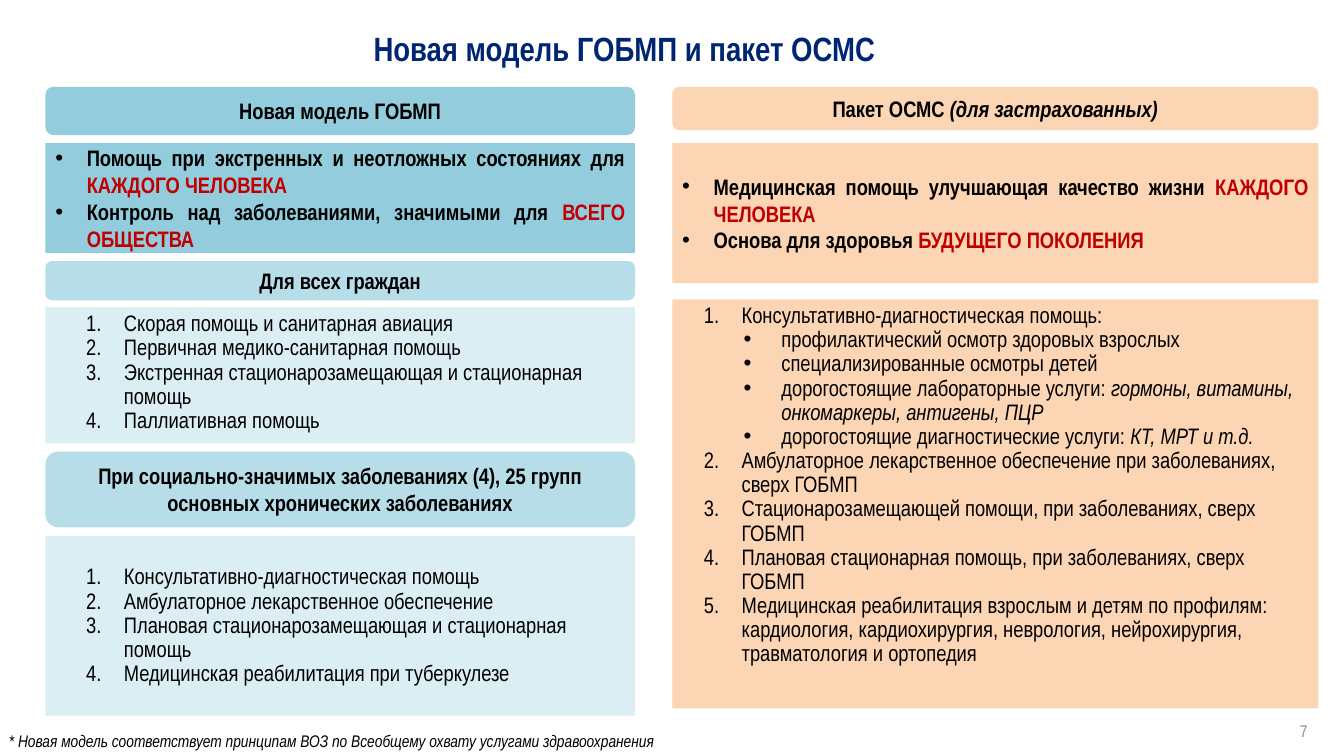
"""Build the slide comparing the ГОБМП model with the ОСМС package."""
from dataclasses import dataclass

from lxml.etree import SubElement
from pptx import Presentation
from pptx.dml.color import RGBColor as RGB
from pptx.enum.shapes import MSO_SHAPE as SHAPE
from pptx.enum.text import MSO_ANCHOR as ANCHOR, MSO_AUTO_SIZE as AUTO, PP_ALIGN as ALIGN
from pptx.oxml.ns import qn
from pptx.util import Pt

FONT = "Arial Narrow"
COLORS = {
    "black": "000000", "red": "C00000", "navy": "002673", "gray": "8C8C8C",
    "teal": "93CDDD", "aqua": "B7DEE8", "ice": "DBEEF4", "peach": "FCD5B5",
}
BOLD = {"bold": True}
ITALIC = {"italic": True}
LEFT_COL = (32.4, 421.2)
RIGHT_COL = (480.2, 461.5)


@dataclass(frozen=True)
class Run:
    text: str
    color: str = "black"
    size: float = 16
    bold: bool = False
    italic: bool = False


@dataclass(frozen=True)
class Para:
    runs: tuple[Run, ...]
    align: ALIGN = ALIGN.LEFT
    level: int = 0
    bullet: str = ""
    margin: float = 0
    hanging: float = 0
    spacing: float = 1.0


@dataclass(frozen=True)
class Panel:
    col: tuple[float, float]
    top: float
    height: float
    fill: str
    paras: tuple[Para, ...]
    shape: SHAPE = SHAPE.RECTANGLE
    anchor: ANCHOR = ANCHOR.MIDDLE


@dataclass(frozen=True)
class Label:
    box: tuple[float, float, float, float]
    run: Run
    align: ALIGN = ALIGN.LEFT
    anchor: ANCHOR = ANCHOR.TOP
    wrap: bool = True
    auto_size: AUTO = AUTO.NONE


def heading(col: tuple[float, float], top: float, height: float, fill: str, *runs: Run) -> Panel:
    """Describe a rounded heading bar."""
    return Panel(col, top, height, fill, (Para(runs, ALIGN.CENTER),), SHAPE.ROUNDED_RECTANGLE)


def goal(text: str, accent: str) -> Para:
    """Describe a bold bulleted goal that ends in a red accent."""
    runs = (Run(text, **BOLD), Run(accent, "red", **BOLD))
    return Para(runs, ALIGN.JUSTIFY, bullet="•", margin=22.5, hanging=22.5)


def numbered(margin: float, level: int, *texts: str) -> tuple[Para, ...]:
    """Describe the items of a numbered list."""
    return tuple(Para((Run(t),), level=level, bullet="1.", margin=margin, hanging=27, spacing=0.9)
                 for t in texts)


def nested(text: str, examples: str = "") -> Para:
    """Describe a bulleted sub-item with optional italic examples."""
    runs = (Run(text),) + ((Run(examples, **ITALIC),) if examples else ())
    return Para(runs, level=3, bullet="•", margin=70.9, hanging=27, spacing=0.9)


PANELS = (
    heading(LEFT_COL, 62, 34.5, "teal", Run("Новая модель ГОБМП", **BOLD)),
    Panel(LEFT_COL, 102.2, 78.5, "teal", (
        goal("Помощь при экстренных и неотложных состояниях для ", "КАЖДОГО ЧЕЛОВЕКА"),
        goal("Контроль над заболеваниями, значимыми для ", "ВСЕГО ОБЩЕСТВА"),
    )),
    heading(LEFT_COL, 186.5, 28, "aqua", Run("Для всех граждан", **BOLD)),
    Panel(LEFT_COL, 219.6, 97.2, "ice", numbered(
        49, 2,
        "Скорая помощь и санитарная авиация",
        "Первичная медико-санитарная помощь",
        "Экстренная стационарозамещающая и стационарная помощь",
        "Паллиативная помощь",
    ), anchor=ANCHOR.TOP),
    heading(LEFT_COL, 322.6, 54, "aqua", Run(
        "При социально-значимых заболеваниях (4), 25 групп основных хронических заболеваниях",
        **BOLD)),
    Panel(LEFT_COL, 383, 128.2, "ice", numbered(
        49, 1,
        "Консультативно-диагностическая помощь",
        "Амбулаторное лекарственное обеспечение",
        "Плановая стационарозамещающая и стационарная помощь",
        "Медицинская реабилитация при туберкулезе",
    )),
    heading(RIGHT_COL, 62, 31, "peach", Run("Пакет ОСМС ", **BOLD),
            Run("(для застрахованных)", **BOLD, **ITALIC)),
    Panel(RIGHT_COL, 102.2, 100.1, "peach", (
        goal("Медицинская помощь улучшающая качество жизни ", "КАЖДОГО ЧЕЛОВЕКА"),
        goal("Основа для здоровья ", "БУДУЩЕГО ПОКОЛЕНИЯ"),
    )),
    Panel(RIGHT_COL, 213.8, 292.3, "peach", (
        *numbered(42.5, 1, "Консультативно-диагностическая помощь:"),
        nested("профилактический осмотр здоровых взрослых"),
        nested("специализированные осмотры детей"),
        nested("дорогостоящие лабораторные услуги: ",
               "гормоны, витамины, онкомаркеры, антигены, ПЦР"),
        nested("дорогостоящие диагностические услуги: ", "КТ, МРТ и т.д."),
        *numbered(
            42.5, 1,
            "Амбулаторное лекарственное обеспечение при заболеваниях, сверх ГОБМП",
            "Стационарозамещающей помощи, при заболеваниях, сверх ГОБМП",
            "Плановая стационарная помощь, при заболеваниях, сверх ГОБМП",
            "Медицинская реабилитация взрослым и детям по профилям: кардиология, "
            "кардиохирургия, неврология, нейрохирургия, травматология и ортопедия",
        ),
    ), anchor=ANCHOR.TOP),
)

LABELS = (
    Label((32.4, 15.8, 821.5, 37.4), Run(" Новая модель ГОБМП и пакет ОСМС", "navy", 24, **BOLD),
          ALIGN.CENTER, ANCHOR.MIDDLE),
    Label((860.4, 511.2, 80.6, 28.8), Run("7", "gray", 12), ALIGN.RIGHT),
    Label((-0.7, 518.4, 485.3, 21.6), Run(
        "* Новая модель соответствует принципам ВОЗ по Всеобщему охвату услугами здравоохранения",
        size=12, **ITALIC), wrap=False, auto_size=AUTO.SHAPE_TO_FIT_TEXT),
)


def set_attrs(target: object, formats: dict[str, object]) -> None:
    """Set each named format value on the target."""
    for name, value in formats.items():
        setattr(target, name, value)


def add_bullet(p: object, para: Para) -> None:
    """Give a paragraph its hanging indent and its bullet or number."""
    pPr = p._p.get_or_add_pPr()
    pPr.set("marL", str(Pt(para.margin)))
    pPr.set("indent", str(-Pt(para.hanging)))
    SubElement(pPr, qn("a:buFont"), typeface=FONT if para.bullet == "1." else "Arial")
    if para.bullet == "1.":
        SubElement(pPr, qn("a:buAutoNum"), type="arabicPeriod")
    else:
        SubElement(pPr, qn("a:buChar"), char=para.bullet)


def write_text(tf: object, paras: tuple[Para, ...], formats: dict[str, object]) -> None:
    """Fill a text frame with formatted paragraphs."""
    set_attrs(tf, formats)
    for i, para in enumerate(paras):
        p = tf.add_paragraph() if i else tf.paragraphs[0]
        set_attrs(p, {"alignment": para.align, "level": para.level, "line_spacing": para.spacing})
        if para.bullet:
            add_bullet(p, para)
        for run in para.runs:
            r = p.add_run()
            r.text = run.text
            set_attrs(r.font, {"name": FONT, "size": Pt(run.size),
                               "bold": run.bold, "italic": run.italic})
            r.font.color.rgb = RGB.from_string(COLORS[run.color])


def add_panel(s: object, panel: Panel) -> None:
    """Draw a filled panel with its text."""
    left, width = panel.col
    sp = s.shapes.add_shape(panel.shape, Pt(left), Pt(panel.top), Pt(width), Pt(panel.height))
    sp.shadow.inherit = False
    sp.fill.solid()
    sp.fill.fore_color.rgb = RGB.from_string(COLORS[panel.fill])
    sp.line.fill.background()
    write_text(sp.text_frame, panel.paras, {"word_wrap": True, "vertical_anchor": panel.anchor})


def add_label(s: object, label: Label) -> None:
    """Draw a text box with one line of text."""
    sp = s.shapes.add_textbox(*map(Pt, label.box))
    write_text(sp.text_frame, (Para((label.run,), label.align),), {
        "word_wrap": label.wrap, "auto_size": label.auto_size, "vertical_anchor": label.anchor})


def main() -> None:
    """Build and save the presentation."""
    prs = Presentation()
    set_attrs(prs, {"slide_width": Pt(960), "slide_height": Pt(540)})
    s = prs.slides.add_slide(prs.slide_layouts[6])
    for panel in PANELS:
        add_panel(s, panel)
    for label in LABELS:
        add_label(s, label)
    prs.save("out.pptx")


if __name__ == "__main__":
    main()
